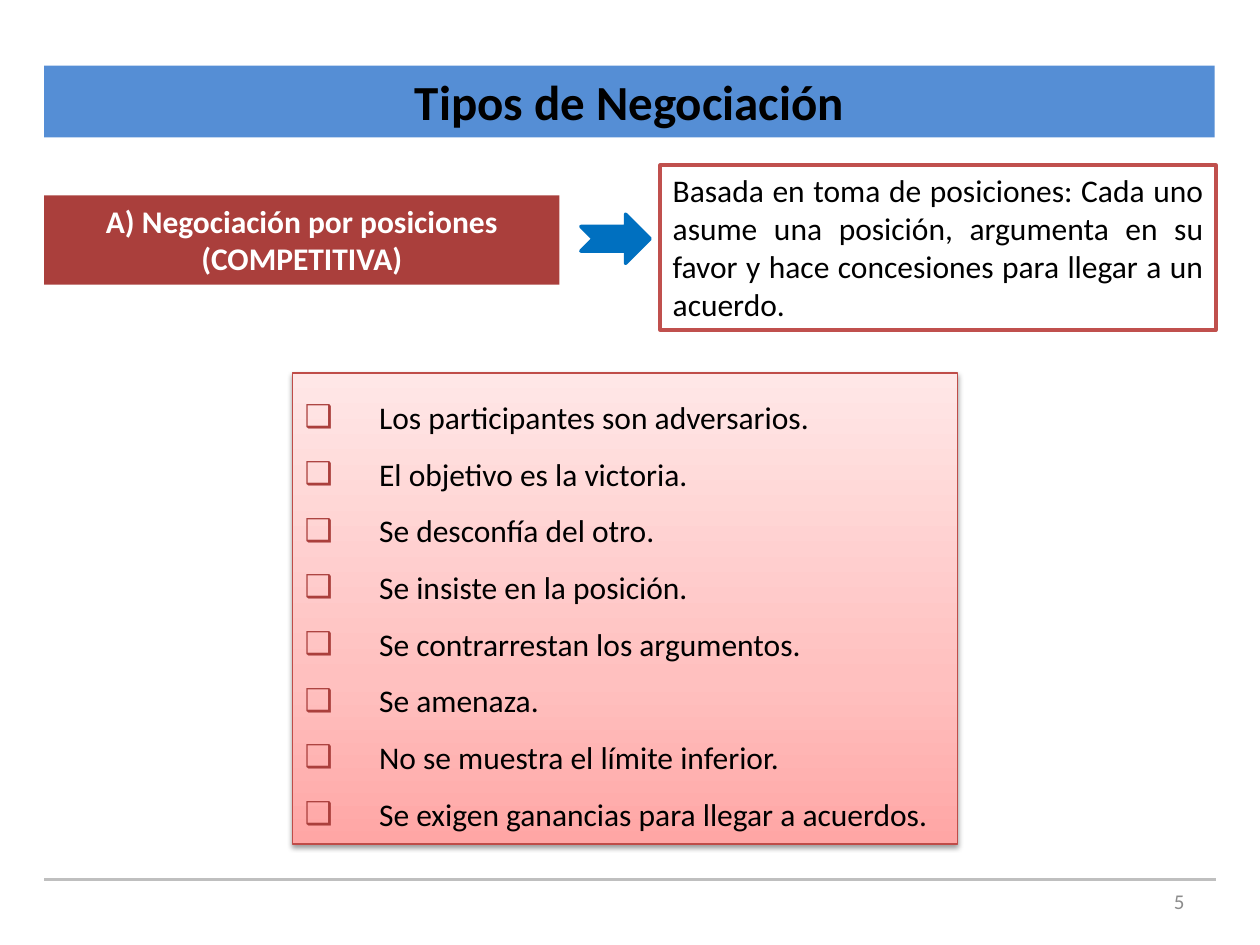
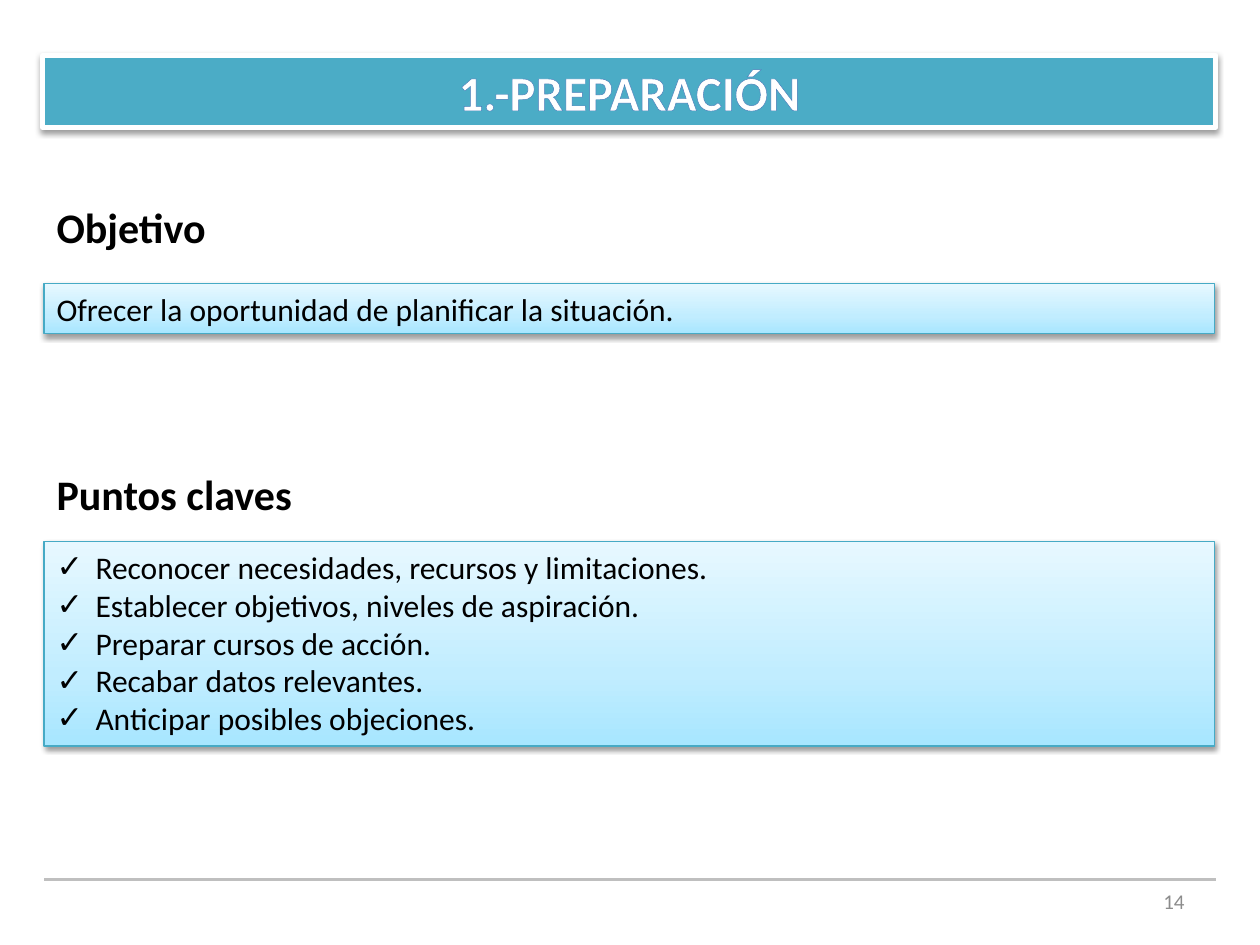
from lxml import etree
from pptx import Presentation
from pptx.dml.color import RGBColor
from pptx.enum.shapes import MSO_CONNECTOR, MSO_SHAPE
from pptx.enum.text import MSO_ANCHOR, MSO_AUTO_SIZE, PP_ALIGN
from pptx.oxml.ns import qn
from pptx.util import Pt

PX = 9144  # EMU per px, 100 px to the inch
FONT = "Calibri"
TITLE_ONLY = 5

BLACK = RGBColor(0x00, 0x00, 0x00)
WHITE = RGBColor(0xFF, 0xFF, 0xFF)
RULE_GREY = RGBColor(0xBF, 0xBF, 0xBF)
NUMBER_GREY = RGBColor(0x8C, 0x8C, 0x8C)
BAND_BLUE = RGBColor(0x55, 0x8E, 0xD5)
BAND_TEAL = RGBColor(0x4B, 0xAC, 0xC6)
OUTLINE_BLUE = RGBColor(0x46, 0x7A, 0xB8)
ARROW_BLUE = RGBColor(0x00, 0x70, 0xC0)
DARK_RED = RGBColor(0xAA, 0x3F, 0x3C)
FRAME_RED = RGBColor(0xC0, 0x50, 0x4D)
PANEL_RED = RGBColor(0xBF, 0x4C, 0x48)
PANEL_TEAL = RGBColor(0x46, 0xAA, 0xC5)
# Gradients run from the bottom edge to the top edge
GRADIENT_STOPS = (0, 35, 100)
RED_GRADIENT = (RGBColor(0xFF, 0xA6, 0xA5), RGBColor(0xFF, 0xC0, 0xBF), RGBColor(0xFF, 0xE7, 0xE7))
TEAL_GRADIENT = (RGBColor(0xA7, 0xE6, 0xFF), RGBColor(0xC1, 0xED, 0xFF), RGBColor(0xE7, 0xF8, 0xFF))

RECTANGLE = MSO_SHAPE.RECTANGLE
ARROW = MSO_SHAPE.NOTCHED_RIGHT_ARROW
STRAIGHT = MSO_CONNECTOR.STRAIGHT
LEFT, CENTER, RIGHT, JUSTIFY = PP_ALIGN.LEFT, PP_ALIGN.CENTER, PP_ALIGN.RIGHT, PP_ALIGN.JUSTIFY
TOP, MIDDLE = MSO_ANCHOR.TOP, MSO_ANCHOR.MIDDLE
FIXED = MSO_AUTO_SIZE.NONE


def emu(box):
    return [length * PX for length in box]


def add_node(parent, tag, **attributes):
    return etree.SubElement(parent, qn(tag), attributes)


# Shape styling
def paint(shape, fill, line=None, line_width=0, shadow=False):
    if isinstance(fill, RGBColor):
        shape.fill.solid()
        shape.fill.fore_color.rgb = fill
    else:
        shape.fill.gradient()
        shape.fill.gradient_angle = 90
        stops = shape._element.spPr.find(".//" + qn("a:gsLst"))
        for stop in list(stops):
            stops.remove(stop)
        for position, color in zip(GRADIENT_STOPS, fill):
            stop = add_node(stops, "a:gs", pos=str(position * 1000))
            add_node(stop, "a:srgbClr", val=str(color))
    if line is None:
        shape.line.fill.background()
    else:
        shape.line.color.rgb = line
        shape.line.width = Pt(line_width)
    shape.shadow.inherit = False
    if shadow:
        effects = shape._element.spPr.find(qn("a:effectLst"))
        cast = add_node(effects, "a:outerShdw", blurRad=str(Pt(3.1)), dist=str(Pt(1.6)),
                        dir="5400000", rotWithShape="0")
        color = add_node(cast, "a:srgbClr", val=str(BLACK))
        add_node(color, "a:alpha", val="38000")


# Text
def set_bullet(para, symbol, indent, color):
    properties = para._p.get_or_add_pPr()
    properties.set("marL", str(indent * PX))
    properties.set("indent", str(-indent * PX))
    bullet_color = add_node(properties, "a:buClr")
    add_node(bullet_color, "a:srgbClr", val=str(color))
    add_node(properties, "a:buFont", typeface=FONT)
    add_node(properties, "a:buChar", char=symbol)


def write(shape, lines, size=18, color=BLACK, bold=False, align=LEFT, anchor=TOP,
          bullet=None, spacing=None):
    frame = shape.text_frame
    frame.word_wrap = True
    frame.auto_size = FIXED
    frame.vertical_anchor = anchor
    for index, line in enumerate(lines):
        para = frame.add_paragraph() if index else frame.paragraphs[0]
        if bullet:
            set_bullet(para, *bullet)
        para.alignment = align
        if spacing:
            para.line_spacing = spacing
        span = para.add_run()
        span.text = line
        span.font.name = FONT
        span.font.size = Pt(size)
        span.font.bold = bold
        span.font.color.rgb = color


def add_panel(page, box, lines, fill, line=None, line_width=0, shadow=False, **style):
    panel = page.shapes.add_shape(RECTANGLE, *emu(box))
    paint(panel, fill, line, line_width, shadow)
    write(panel, lines, **style)


# Parts shared by the slides
def add_footer(page, number):
    rule = page.shapes.add_connector(STRAIGHT, *emu((35, 698, 965, 698)))
    rule.line.color.rgb = RULE_GREY
    rule.line.width = Pt(2)
    add_node(rule._element.spPr, "a:effectLst")
    label = page.shapes.add_textbox(*emu((717, 695, 233, 40)))
    write(label, [number], size=12, color=NUMBER_GREY, align=RIGHT, anchor=MIDDLE)


def add_page(deck, number, title, box, color, **band):
    page = deck.slides.add_slide(deck.slide_layouts[TITLE_ONLY])
    heading = page.shapes.title
    heading.left, heading.top, heading.width, heading.height = emu(box)
    paint(heading, **band)
    write(heading, [title], size=28, color=color, bold=True, align=CENTER)
    add_footer(page, number)
    return page


def outline_title(page, color, width):
    span = page.shapes.title.text_frame.paragraphs[0].runs[0]
    line = etree.Element(qn("a:ln"), w=str(Pt(width)))
    add_node(add_node(line, "a:solidFill"), "a:srgbClr", val=str(color))
    span.font._element.insert(0, line)


# Negotiation type: name, arrow and definition
def add_definition(page, box, name, definition):
    left, top, width, height = box
    add_panel(page, (left, top + 24, 409, 71), [name],
              DARK_RED, color=WHITE, bold=True, align=CENTER)
    add_panel(page, (left + width - 441, top, 441, height), [definition],
              WHITE, FRAME_RED, 2, align=JUSTIFY)
    arrow = page.shapes.add_shape(ARROW, *emu((left + 426, top + 39, 55, 39)))
    paint(arrow, ARROW_BLUE, ARROW_BLUE, 2)


# Heading with a panel below it
def add_section(page, box, heading, heading_gap, lines, **style):
    left, top, width, height = box
    label = page.shapes.add_textbox(*emu((left, top, 331, 50)))
    write(label, [heading], size=24, bold=True)
    add_panel(page, (left, top + heading_gap, width, height - heading_gap), lines,
              TEAL_GRADIENT, PANEL_TEAL, 0.75, shadow=True, **style)


def build_types_page(deck):
    page = add_page(deck, "5", "Tipos de Negociación", (35, 52, 929, 57), BLACK, fill=BAND_BLUE)
    add_definition(
        page, (35, 131, 930, 131), "A) Negociación por posiciones (COMPETITIVA)",
        "Basada en toma de posiciones: Cada uno asume una posición, argumenta en su favor "
        "y hace concesiones para llegar a un acuerdo.")
    traits = [
        "Los participantes son adversarios.",
        "El objetivo es la victoria.",
        "Se desconfía del otro.",
        "Se insiste en la posición.",
        "Se contrarrestan los argumentos.",
        "Se amenaza.",
        "No se muestra el límite inferior.",
        "Se exigen ganancias para llegar a acuerdos.",
    ]
    add_panel(page, (232, 296, 528, 374), traits, RED_GRADIENT, PANEL_RED, 0.75, shadow=True,
              bullet=("❑", 59, DARK_RED), spacing=1.5)


def build_preparation_page(deck):
    page = add_page(deck, "14", "1.-PREPARACIÓN", (34, 44, 931, 57), WHITE,
                    fill=BAND_TEAL, line=WHITE, line_width=3, shadow=True)
    outline_title(page, OUTLINE_BLUE, 0.83)
    add_section(page, (35, 155, 929, 110), "Objetivo", 70,
                ["Ofrecer la oportunidad de planificar la situación."])
    key_points = [
        "Reconocer necesidades, recursos y limitaciones.",
        "Establecer objetivos, niveles de aspiración.",
        "Preparar cursos de acción.",
        "Recabar datos relevantes.",
        "Anticipar posibles objeciones.",
    ]
    add_section(page, (35, 367, 929, 225), "Puntos claves", 63, key_points,
                bullet=("✓", 31, BLACK))


def main():
    deck = Presentation()
    deck.slide_width, deck.slide_height = emu((1000, 750))
    build_types_page(deck)
    build_preparation_page(deck)
    deck.save("out.pptx")


if __name__ == "__main__":
    main()
